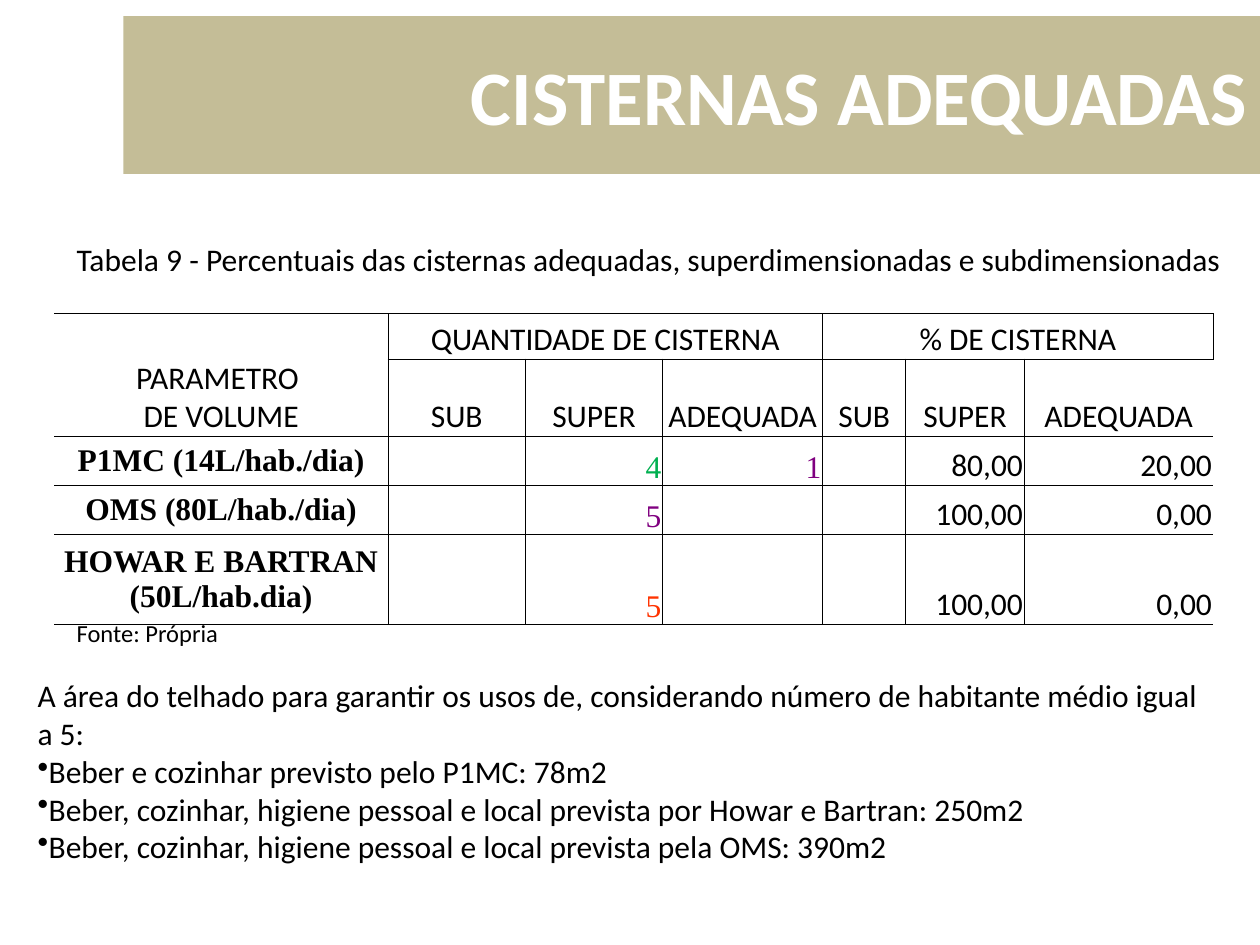
from dataclasses import dataclass
from typing import Optional

from lxml.etree import SubElement
from pptx import Presentation
from pptx.dml.color import RGBColor
from pptx.enum.shapes import MSO_SHAPE
from pptx.enum.text import MSO_ANCHOR, MSO_AUTO_SIZE, PP_ALIGN
from pptx.oxml.ns import qn
from pptx.util import Inches, Pt

W, H = Inches(10), Inches(7.5)
COLORS = {"band": "C4BD97", "white": "FFFFFF", "black": "000000",
          "green": "00B050", "purple": "800080", "red": "FF3300"}
SERIF = "Times New Roman"
COL_SHARES = [26.5, 10.9, 10.9, 12.7, 6.6, 9.4, 15]
ROW_SHARES = [4.8, 4.8, 5.2, 5.2, 9.5]


@dataclass
class Box:
    x: float
    y: float
    w: float
    h: float

    def emu(self) -> tuple:
        return across(self.x), down(self.y), across(self.w), down(self.h)


@dataclass
class Entry:
    row: int
    col: int
    text: str
    color: str = "black"
    font: str = "Calibri"
    bold: bool = False
    align: PP_ALIGN = PP_ALIGN.CENTER
    anchor: MSO_ANCHOR = MSO_ANCHOR.BOTTOM


@dataclass
class Result:
    name: str
    super_count: str
    super_color: str
    adequate_count: str
    super_pct: str
    adequate_pct: str


HEADINGS = [
    Entry(0, 0, "PARAMETRO \nDE VOLUME"),
    Entry(0, 1, "QUANTIDADE DE CISTERNA"),
    Entry(0, 4, "% DE CISTERNA"),
] + [Entry(1, c, name) for c, name in enumerate(["SUB", "SUPER", "ADEQUADA"] * 2, 1)]

RESULTS = [
    Result("P1MC (14L/hab./dia)", "4", "green", "1", "80,00", "20,00"),
    Result("OMS (80L/hab./dia)", "5", "purple", "", "100,00", "0,00"),
    Result("HOWAR E BARTRAN (50L/hab.dia)", "5", "red", "", "100,00", "0,00"),
]

ROOF_AREAS = [
    "Beber e cozinhar previsto pelo P1MC: 78m2",
    "Beber, cozinhar, higiene pessoal e local prevista por Howar e Bartran: 250m2",
    "Beber, cozinhar, higiene pessoal e local prevista pela OMS: 390m2",
]


def across(share: float) -> int:
    return int(W * share / 100)


def down(share: float) -> int:
    return int(H * share / 100)


def write(p, text: str, *, size: float = 18, color: str = "black", font: str = "Calibri",
          bold: bool = False, align: PP_ALIGN = PP_ALIGN.LEFT,
          bullet: Optional[str] = None) -> None:
    if bullet:
        SubElement(p._p.get_or_add_pPr(), qn("a:buChar"), char=bullet)
    p.alignment = align
    for i, line in enumerate(text.split("\n")):
        if i:
            p.add_line_break()
        r = p.add_run()
        r.text = line
        r.font.size = Pt(size)
        r.font.name = font
        r.font.bold = bold
        r.font.color.rgb = RGBColor.from_string(COLORS[color])


def add_text(s, box: Box, text: str, **fmt):
    tf = s.shapes.add_textbox(*box.emu()).text_frame
    tf.word_wrap = True
    tf.auto_size = MSO_AUTO_SIZE.SHAPE_TO_FIT_TEXT
    write(tf.paragraphs[0], text, **fmt)
    return tf


def add_title(s, box: Box, text: str) -> None:
    sp = s.shapes.add_shape(MSO_SHAPE.RECTANGLE, *box.emu())
    sp.shadow.inherit = False
    sp.fill.solid()
    sp.fill.fore_color.rgb = RGBColor.from_string(COLORS["band"])
    sp.line.fill.background()
    tf = sp.text_frame
    tf.word_wrap = True
    tf.vertical_anchor = MSO_ANCHOR.MIDDLE
    write(tf.paragraphs[0], text, size=44, color="white", bold=True, align=PP_ALIGN.RIGHT)


def set_borders(cell, sides: str) -> None:
    tcPr = cell._tc.get_or_add_tcPr()
    for side in "LRTB":
        ln = SubElement(tcPr, qn(f"a:ln{side}"), w=str(Pt(0.5)))
        if side in sides:
            fill = SubElement(ln, qn("a:solidFill"))
            SubElement(fill, qn("a:srgbClr"), val=COLORS["black"])
        else:
            SubElement(ln, qn("a:noFill"))


def result_entries(row: int, res: Result) -> list[Entry]:
    right = PP_ALIGN.RIGHT
    return [
        Entry(row, 0, res.name, font=SERIF, bold=True, anchor=MSO_ANCHOR.MIDDLE),
        Entry(row, 2, res.super_count, res.super_color, SERIF, align=right),
        Entry(row, 3, res.adequate_count, "purple", SERIF, align=right),
        Entry(row, 5, res.super_pct, align=right),
        Entry(row, 6, res.adequate_pct, align=right),
    ]


def add_cistern_table(s, x: float, y: float) -> None:
    box = Box(x, y, sum(COL_SHARES), sum(ROW_SHARES))
    table = s.shapes.add_table(len(ROW_SHARES), len(COL_SHARES), *box.emu()).table
    table.first_row = table.horz_banding = False
    for col, share in zip(table.columns, COL_SHARES):
        col.width = across(share)
    for row, share in zip(table.rows, ROW_SHARES):
        row.height = down(share)

    last = len(COL_SHARES) - 1
    for i in range(len(ROW_SHARES)):
        for j in range(last + 1):
            cell = table.cell(i, j)
            cell.margin_left = cell.margin_right = cell.margin_top = Inches(0.01)
            cell.margin_bottom = 0
            left = "L" if j else ""
            right = "R" if j < last or i == 0 else ""
            set_borders(cell, "TB" + left + right)
            cell.fill.background()

    for first, end in [((0, 0), (1, 0)), ((0, 1), (0, 3)), ((0, 4), (0, 6))]:
        table.cell(*first).merge(table.cell(*end))

    entries = HEADINGS + [e for i, res in enumerate(RESULTS, 2) for e in result_entries(i, res)]
    for e in entries:
        if e.text:
            cell = table.cell(e.row, e.col)
            cell.vertical_anchor = e.anchor
            write(cell.text_frame.paragraphs[0], e.text, color=e.color, font=e.font,
                  bold=e.bold, align=e.align)


def main() -> None:
    prs = Presentation()
    prs.slide_width, prs.slide_height = W, H
    s = prs.slides.add_slide(prs.slide_layouts[6])
    add_title(s, Box(9.8, 1.7, 90.2, 16.7), "CISTERNAS ADEQUADAS")
    add_text(s, Box(5.1, 24.8, 94.9, 5.3),
             "Tabela 9 - Percentuais das cisternas adequadas, superdimensionadas e subdimensionadas")
    add_text(s, Box(5.1, 64.7, 26.8, 4.5), "Fonte: Própria", size=14)
    add_cistern_table(s, 4.3, 33.2)
    tf = add_text(s, Box(2, 70.9, 95.3, 21.6),
                  "A área do telhado para garantir os usos de, considerando número de "
                  "habitante médio igual a 5:")
    for area in ROOF_AREAS:
        write(tf.add_paragraph(), area, bullet="•")
    prs.save("out.pptx")


if __name__ == "__main__":
    main()
